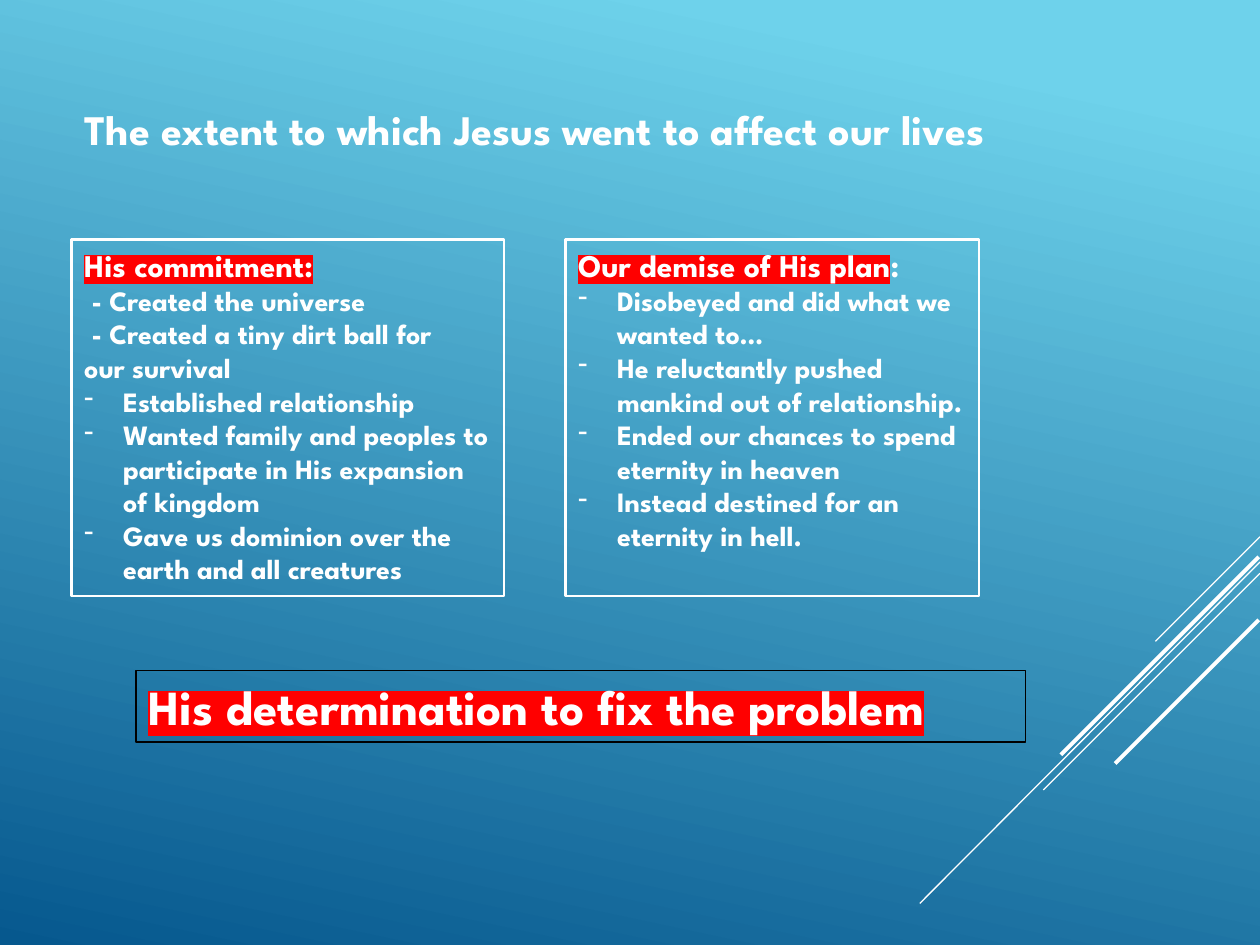
import pptx
import pptx.util
import pptx.dml.color
import pptx.enum.shapes
import pptx.enum.text
import pptx.oxml
import pptx.oxml.ns
from lxml import etree

RGBColor = pptx.dml.color.RGBColor
WHITE = RGBColor(0xFF, 0xFF, 0xFF)
BLACK = RGBColor(0x00, 0x00, 0x00)
RED = RGBColor(0xFF, 0x00, 0x00)
SKY = RGBColor(0x6E, 0xD2, 0xEB)
DEEP_BLUE = RGBColor(0x06, 0x58, 0x8E)

qn = pptx.oxml.ns.qn


class SlideBuilder:
    """Holds the style and the slide; lengths are hundredths of the slide."""
    font = "League Spartan"
    bullet_indent = pptx.util.Inches(0.31)

    def __init__(self, deck):
        self.width, self.height = deck.slide_width, deck.slide_height
        self.slide = deck.slides.add_slide(deck.slide_layouts[5])

    def x(self, share):
        return round(self.width * share / 100)

    def y(self, share):
        return round(self.height * share / 100)

    def background(self, top, bottom, angle):
        fill = self.slide.background.fill
        fill.gradient()
        fill.gradient_angle = angle
        for stop, color, position in zip(fill.gradient_stops, (top, bottom), (0.1, 1)):
            stop.color.rgb = color
            stop.position = position

    def streak(self, start, end, weight):
        line = self.slide.shapes.add_connector(
            pptx.enum.shapes.MSO_CONNECTOR.STRAIGHT,
            self.x(start[0]), self.y(start[1]), self.x(end[0]), self.y(end[1]))
        line.line.color.rgb = WHITE
        line.line.width = pptx.util.Pt(weight)
        etree.SubElement(line._element.spPr, qn("a:effectLst"))

    def style_run(self, run, size, highlight=None):
        run.font.name = self.font
        run.font.size = pptx.util.Pt(size)
        run.font.bold = True
        run.font.color.rgb = WHITE
        if highlight is not None:
            mark = etree.Element(qn("a:highlight"))
            etree.SubElement(mark, qn("a:srgbClr"), val=str(highlight))
            run.font._element.find(qn("a:solidFill")).addnext(mark)

    def style_paragraph(self, paragraph, bullet=False):
        paragraph.alignment = pptx.enum.text.PP_ALIGN.LEFT
        if bullet:
            properties = paragraph._p.get_or_add_pPr()
            properties.set("marL", str(self.bullet_indent))
            properties.set("indent", str(-self.bullet_indent))
            etree.SubElement(properties, qn("a:buChar"), char="-")

    def style_frame(self, frame):
        frame.word_wrap = True
        frame.auto_size = pptx.enum.text.MSO_AUTO_SIZE.SHAPE_TO_FIT_TEXT
        frame.vertical_anchor = pptx.enum.text.MSO_ANCHOR.TOP

    def title(self, text, left, top, width, height, size):
        title = self.slide.shapes.title
        title.left, title.top = self.x(left), self.y(top)
        title.width, title.height = self.x(width), self.y(height)
        title.text_frame.text = text
        self.style_frame(title.text_frame)
        paragraph = title.text_frame.paragraphs[0]
        self.style_paragraph(paragraph)
        self.style_run(paragraph.runs[0], size)

    def box(self, heading, left, top, width, height, size, outline, weight,
            tail="", plain=(), bullets=()):
        box = self.slide.shapes.add_shape(
            pptx.enum.shapes.MSO_SHAPE.RECTANGLE,
            self.x(left), self.y(top), self.x(width), self.y(height))
        box.shadow.inherit = False
        box.fill.background()
        box.line.color.rgb = outline
        box.line.width = pptx.util.Pt(weight)
        frame = box.text_frame
        self.style_frame(frame)

        # Highlighted heading, with an unmarked ending where there is one
        frame.text = heading
        first = frame.paragraphs[0]
        self.style_paragraph(first)
        self.style_run(first.runs[0], size, RED)
        if tail:
            ending = first.add_run()
            ending.text = tail
            self.style_run(ending, size)

        # Points below the heading
        for points, bullet in ((plain, False), (bullets, True)):
            for point in points:
                paragraph = frame.add_paragraph()
                paragraph.text = point
                self.style_paragraph(paragraph, bullet)
                self.style_run(paragraph.runs[0], 16)


def main():
    deck = pptx.Presentation()
    deck.slide_width = pptx.util.Inches(10)
    deck.slide_height = pptx.util.Inches(7.5)
    page = SlideBuilder(deck)
    page.background(SKY, DEEP_BLUE, 360 - 102)

    # Diagonal streaks in the lower right corner
    for start, end, weight in (
            ((100, 56.8), (91.7, 67.87), 0.75),
            ((100, 59.47), (73, 95.6), 0.75),
            ((100, 60.67), (82.8, 83.6), 0.75),
            ((99.9, 58.93), (84.2, 79.87), 2.25),
            ((99.9, 65.6), (88.5, 80.8), 2.25)):
        page.streak(start, end, weight)

    page.title("The extent to which Jesus went to affect our lives",
               5.7, 10.27, 81.2, 6.67, 24)

    # Two facing lists
    list_top, list_height = 25.33, 37.73
    page.box("His commitment:", 5.7, list_top, 34.3, list_height, 18, WHITE, 1.5,
             plain=(" - Created the universe",
                    " - Created a tiny dirt ball for \tour survival"),
             bullets=("Established relationship",
                      "Wanted family and peoples to participate in His expansion of kingdom",
                      "Gave us dominion over the earth and all creatures"))
    page.box("Our demise of His plan", 44.9, list_top, 32.8, list_height, 18, WHITE, 1.5,
             tail=":",
             bullets=("Disobeyed and did what we wanted to…",
                      "He reluctantly pushed mankind out of relationship.",
                      "Ended our chances to spend eternity in heaven",
                      "Instead destined for an eternity in hell."))

    # Conclusion
    page.box("His determination to fix the problem",
             10.8, 70.93, 70.6, 7.6, 28, BLACK, 0.75)

    deck.save("out.pptx")


if __name__ == "__main__":
    main()
